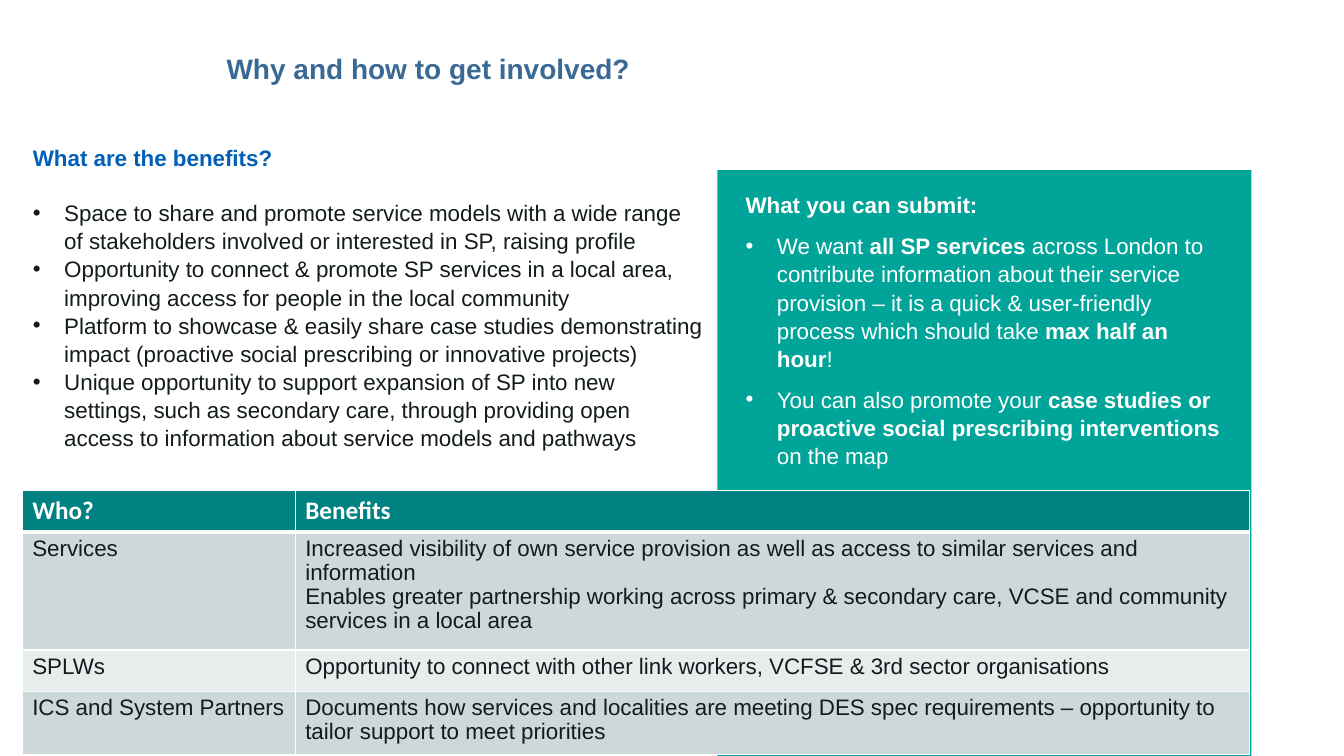
from lxml import etree
from pptx import Presentation
from pptx.dml.color import RGBColor
from pptx.enum.shapes import MSO_SHAPE
from pptx.oxml.ns import qn
from pptx.util import Cm, Pt

RECT = MSO_SHAPE.RECTANGLE
WHITE = RGBColor(0xFF, 0xFF, 0xFF)
GREEN = RGBColor(0x00, 0xA4, 0x99)
TEAL = RGBColor(0x00, 0x82, 0x83)
STEEL = RGBColor(0x3A, 0x69, 0x96)
BLUE = RGBColor(0x00, 0x5F, 0xB8)
INK = RGBColor(0x13, 0x1B, 0x1C)
DARK = RGBColor(0xCC, 0xD8, 0xD9)
LIGHT = RGBColor(0xE7, 0xED, 0xED)

GAINS = [
    "Space to share and promote service models with a wide range of stakeholders involved or interested in SP, raising profile",
    "Opportunity to connect & promote SP services in a local area, improving access for people in the local community",
    "Platform to showcase & easily share case studies demonstrating impact (proactive social prescribing or innovative projects)",
    "Unique opportunity to support expansion of SP into new settings, such as secondary care, through providing open access to information about service models and pathways",
]
ASKS = [
    ["We want ", "all SP services",
     " across London to contribute information about their service provision – it is a quick & user-friendly process which should take ",
     "max half an hour", "!"],
    ["You can also promote your ",
     "case studies or proactive social prescribing interventions", " on the map"],
]
ROWS = [
    ("Who?", "Benefits"),
    ("Services",
     "Increased visibility of own service provision as well as access to similar services and information\n"
     "Enables greater partnership working across primary & secondary care, VCSE and community services in a local area"),
    ("SPLWs",
     "Opportunity to connect with other link workers, VCFSE & 3rd sector organisations"),
    ("ICS and System Partners",
     "Documents how services and localities are meeting DES spec requirements – opportunity to tailor support to meet priorities"),
]


class Deck:
    """Builds one slide in a shared text style."""

    def __init__(self):
        self.prs = Presentation()
        self.prs.slide_width, self.prs.slide_height = Cm(33.87), Cm(19.05)
        self.slide = self.prs.slides.add_slide(self.prs.slide_layouts[6])
        self.face = "Arial"
        self.size = 16

    def font(self, run, color, bold=False, size=None, face=None):
        font = run.font
        font.name = face or self.face
        font.size = Pt(size or self.size)
        font.bold = bold
        font.color.rgb = color

    def panel(self, box, color):
        shape = self.slide.shapes.add_shape(RECT, *map(Cm, box))
        shape.shadow.inherit = False
        shape.fill.solid()
        shape.fill.fore_color.rgb = color
        shape.line.fill.background()

    def text(self, box, head, color, size=None, gap=0, space=1.05):
        frame = self.slide.shapes.add_textbox(*map(Cm, box)).text_frame
        frame.word_wrap = True
        frame.text = head
        para = frame.paragraphs[0]
        para.line_spacing = space
        para.space_after = Pt(gap)
        self.font(para.runs[0], color, True, size)
        return frame

    def bullet(self, frame, parts, color, gap=0):
        para = frame.add_paragraph()
        props = para._p.get_or_add_pPr()
        props.set("marL", str(Cm(0.79)))
        props.set("indent", str(-Cm(0.79)))
        etree.SubElement(props, qn("a:buFont")).set("typeface", "Arial")
        etree.SubElement(props, qn("a:buChar")).set("char", "•")
        para.line_spacing = 1.05
        para.space_after = Pt(gap)
        for num, part in enumerate(parts):
            run = para.add_run()
            run.text = part
            self.font(run, color, num % 2 == 1)

    def border(self, cell, head):
        props = cell._tc.get_or_add_tcPr()
        for spot, side in enumerate(("lnL", "lnR", "lnT", "lnB")):
            line = etree.Element(qn("a:" + side))
            line.set("w", str(Pt(3 if head and side == "lnB" else 1)))
            fill = etree.SubElement(line, qn("a:solidFill"))
            etree.SubElement(fill, qn("a:srgbClr")).set("val", str(WHITE))
            props.insert(spot, line)

    def table(self, spot, wide, high, rows):
        left, top = spot
        frame = self.slide.shapes.add_table(
            len(rows), len(wide), Cm(left), Cm(top), Cm(sum(wide)), Cm(sum(high)))
        grid = frame.table
        for col, width in zip(grid.columns, wide):
            col.width = Cm(width)
        for num, (row, height) in enumerate(zip(grid.rows, high)):
            row.height = Cm(height)
            head = num == 0
            for cell, words in zip(row.cells, rows[num]):
                cell.fill.solid()
                cell.fill.fore_color.rgb = TEAL if head else (LIGHT, DARK)[num % 2]
                self.border(cell, head)
                cell.text_frame.text = words
                for para in cell.text_frame.paragraphs:
                    para.line_spacing = 1 if head else 0.97
                    if head:
                        self.font(para.runs[0], WHITE, True, 18, "Calibri")
                    else:
                        self.font(para.runs[0], INK)


def main():
    deck = Deck()
    deck.panel((18.08, 4.29, 13.46, 14.76), GREEN)
    asks = deck.text((18.54, 4.67, 12.52, 13.87), "What you can submit:", WHITE, gap=9)
    for parts in ASKS:
        deck.bullet(asks, parts, WHITE, 9)
    deck.text((5.46, 1.12, 15.29, 1.98), "Why and how to get involved?", STEEL, 20)
    gains = deck.text((0.58, 3.48, 17.4, 9.14), "What are the benefits?", BLUE, gap=19)
    for words in GAINS:
        deck.bullet(gains, [words], INK)
    deck.table((0.56, 12.37), (6.88, 24.05), (1.04, 2.97, 1.04, 1.6), ROWS)
    deck.prs.save("out.pptx")


if __name__ == "__main__":
    main()
